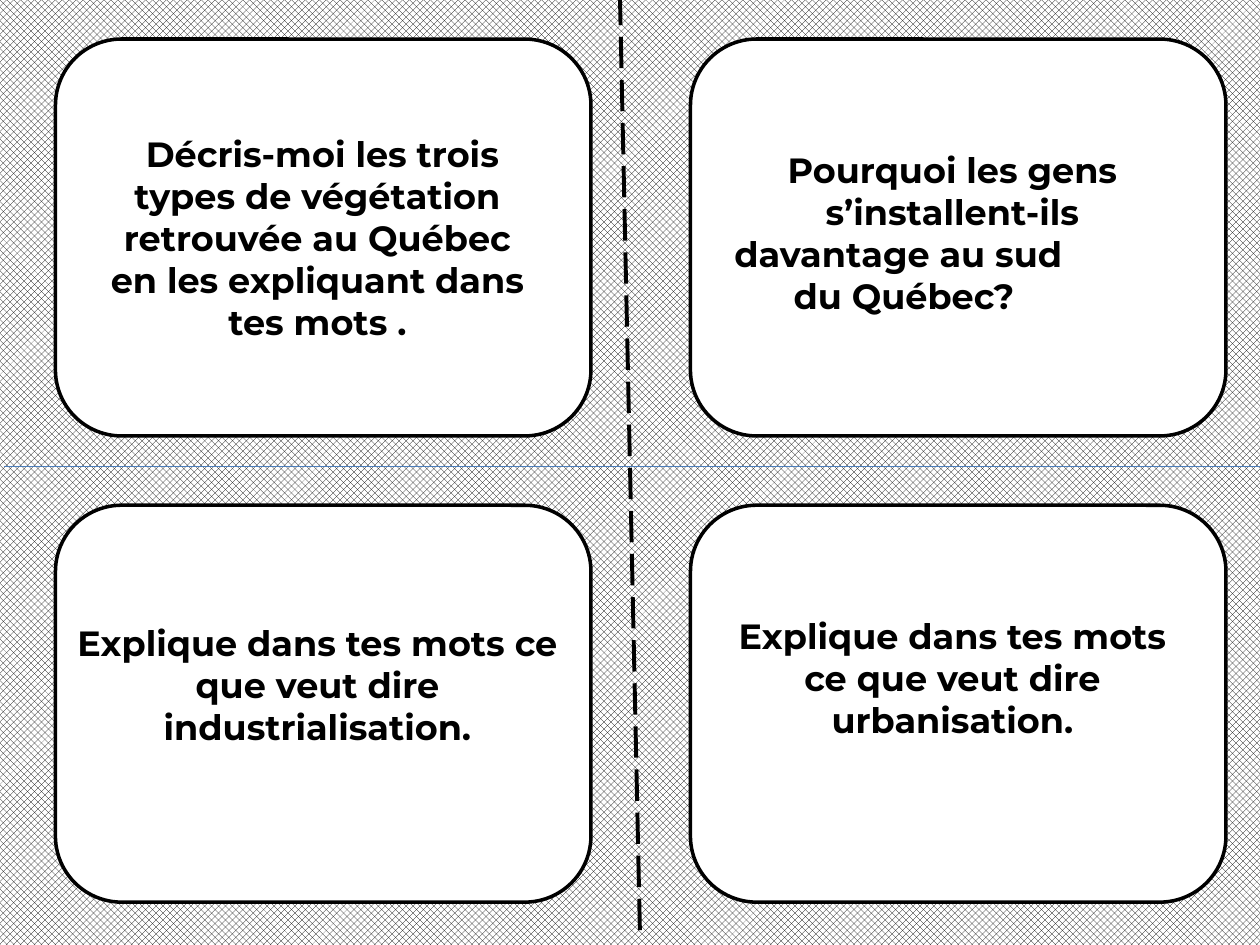
from lxml import etree
from pptx import Presentation
from pptx.dml.color import RGBColor
from pptx.enum.dml import MSO_LINE, MSO_PATTERN
from pptx.enum.shapes import MSO_CONNECTOR, MSO_SHAPE
from pptx.enum.text import MSO_AUTO_SIZE, PP_ALIGN
from pptx.oxml.ns import qn
from pptx.util import Inches, Pt

STRAIGHT = MSO_CONNECTOR.STRAIGHT
ROUNDED = MSO_SHAPE.ROUNDED_RECTANGLE
CENTER, LEFT = PP_ALIGN.CENTER, PP_ALIGN.LEFT
BLACK, WHITE, BLUE = "000000", "FFFFFF", "4B7EBC"


def rgb(value):
    return RGBColor.from_string(value)


prs = Presentation()
prs.slide_width = Inches(10)
prs.slide_height = Inches(7.5)
slide = prs.slides.add_slide(prs.slide_layouts[6])

backdrop = slide.background.fill
backdrop.patterned()
backdrop.pattern = MSO_PATTERN.SOLID_DIAMOND
backdrop.fore_color.rgb = rgb(BLACK)
backdrop.back_color.rgb = rgb(WHITE)

# Cutting lines between the cards: start, end, colour, width, dash
cut_lines = [
    ((4.92, -0.05), (5.08, 7.45), BLACK, 2.25, MSO_LINE.LONG_DASH),
    ((0.03, 3.7), (10.22, 3.7), BLUE, 0.75, MSO_LINE.SOLID),
]
for start, end, color, width, dash in cut_lines:
    cut = slide.shapes.add_connector(
        STRAIGHT, *(Inches(value) for value in start + end))
    cut.line.color.rgb = rgb(color)
    cut.line.width = Pt(width)
    cut.line.dash_style = dash
    etree.SubElement(cut._element.spPr, qn("a:effectLst"))

for top in (0.31, 4.01):
    for left in (0.44, 5.48):
        card = slide.shapes.add_shape(
            ROUNDED, Inches(left), Inches(top), Inches(4.25), Inches(3.15))
        card.shadow.inherit = False
        card.fill.solid()
        card.fill.fore_color.rgb = rgb(WHITE)
        card.line.color.rgb = rgb(BLACK)
        card.line.width = Pt(2)

# Questions: box, then paragraphs as (text, alignment, left indent)
questions = [
    ((0.67, 1, 3.7, 1.78), [
        (" Décris-moi les trois types de végétation retrouvée au Québec "
         "en les expliquant dans tes mots .", CENTER, 0)]),
    ((0.51, 4.88, 4.02, 1.11), [
        ("Explique dans tes mots ce que veut dire industrialisation.", CENTER, 0)]),
    ((5.71, 1.13, 3.7, 1.45), [
        ("Pourquoi les gens s’installent-ils", CENTER, 0),
        ("davantage au sud", LEFT, 0.02),
        ("du Québec?", LEFT, 0.49)]),
    ((5.71, 4.83, 3.7, 1.11), [
        ("Explique dans tes mots ce que veut dire urbanisation.", CENTER, 0)]),
]
for box, paragraphs in questions:
    frame = slide.shapes.add_textbox(*(Inches(value) for value in box)).text_frame
    frame.word_wrap = True
    frame.auto_size = MSO_AUTO_SIZE.SHAPE_TO_FIT_TEXT
    frame.text = "\n".join(text for text, _, _ in paragraphs)
    for paragraph, (_, alignment, indent) in zip(frame.paragraphs, paragraphs):
        paragraph.alignment = alignment
        if indent:
            paragraph._p.get_or_add_pPr().set("marL", str(Inches(indent)))
        paragraph.font.name = "Montserrat"
        paragraph.font.size = Pt(20)
        paragraph.font.bold = True
        paragraph.font.color.rgb = rgb(BLACK)

prs.save("out.pptx")
